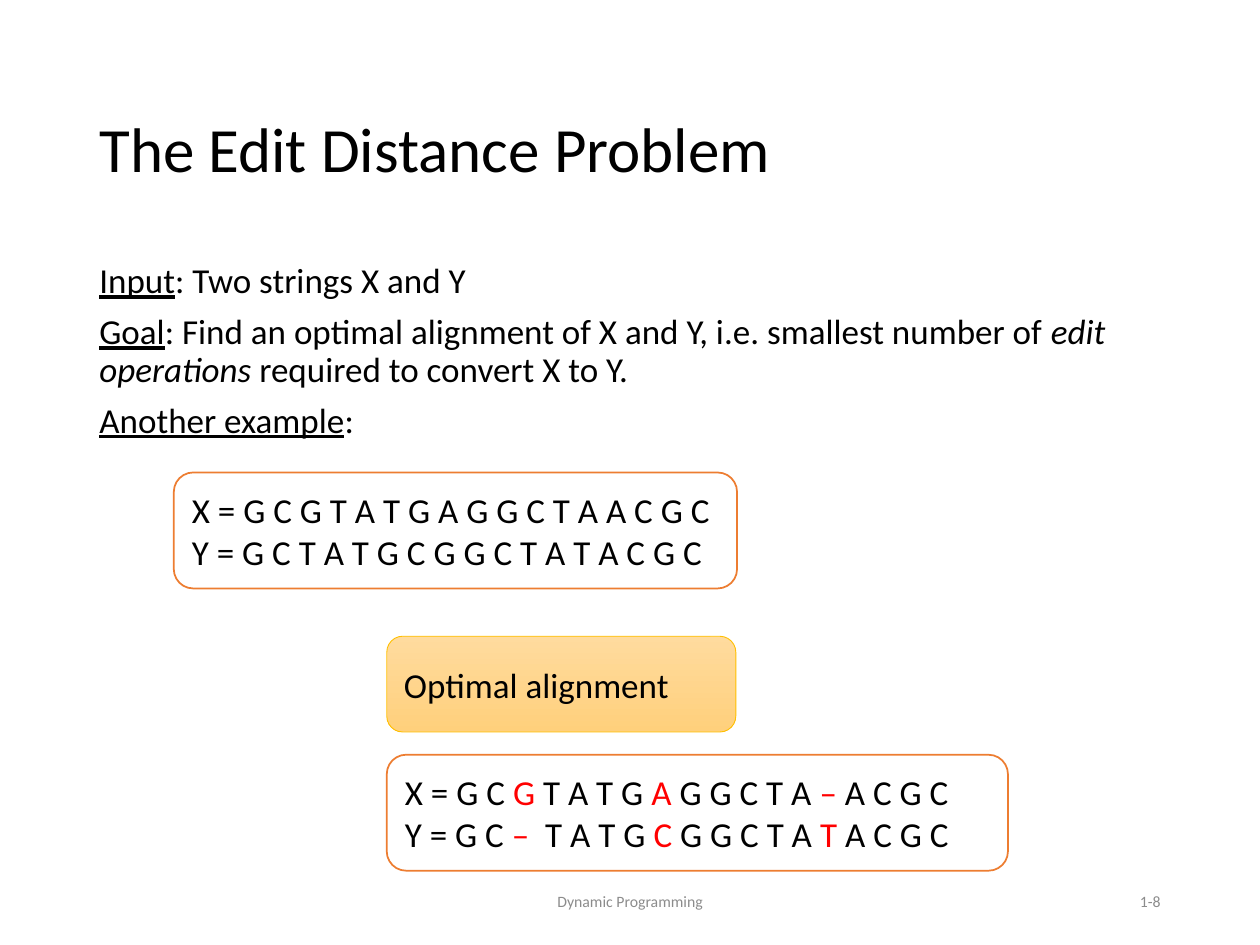
from pptx import Presentation
from pptx.dml.color import RGBColor
from pptx.enum.shapes import MSO_SHAPE
from pptx.enum.text import MSO_ANCHOR, PP_ALIGN
from pptx.util import Inches, Pt

COLORS = {
    "text": "000000",
    "footer": "8C8C8C",
    "edit": "FF0000",
    "panel": "FFFFFF",
    "panel_line": "ED7D31",
    "label_top": "FFDB9E",
    "label_bottom": "FFD07C",
    "label_line": "FFC000",
}
FONT = "Calibri"
UNDERLINE = {"underline": True}
ITALIC = {"italic": True}
EDIT = {"color": "edit"}


def rgb(name):
    return RGBColor.from_string(COLORS[name])


def write(shape, paragraphs, size=20, color="text", align=PP_ALIGN.LEFT,
          anchor=MSO_ANCHOR.MIDDLE, line_spacing=None, space_before=None):
    """Fill a shape with paragraphs, each a list of (text, format) spans."""
    frame = shape.text_frame
    frame.word_wrap = True
    frame.vertical_anchor = anchor
    for index, spans in enumerate(paragraphs):
        para = frame.add_paragraph() if index else frame.paragraphs[0]
        para.alignment = align
        if line_spacing is not None:
            para.line_spacing = line_spacing
        if space_before is not None:
            para.space_before = Pt(space_before)
        for text, style in spans:
            span = para.add_run()
            span.text = text
            font = span.font
            font.name, font.size = FONT, Pt(size)
            font.color.rgb = rgb(style.get("color", color))
            font.underline = style.get("underline")
            font.italic = style.get("italic")


def add_text(page, box, paragraphs, **style):
    shape = page.shapes.add_textbox(*map(Inches, box))
    write(shape, paragraphs, **style)


def add_rounded(page, box, line, width):
    shape = page.shapes.add_shape(MSO_SHAPE.ROUNDED_RECTANGLE, *map(Inches, box))
    shape.shadow.inherit = False
    shape.line.color.rgb = rgb(line)
    shape.line.width = Pt(width)
    return shape


def add_panel(page, box, strings):
    """White panel holding a pair of strings."""
    panel = add_rounded(page, box, "panel_line", 1)
    panel.fill.solid()
    panel.fill.fore_color.rgb = rgb("panel")
    write(panel, strings)


def add_label(page, box, text):
    """Label with a gradient running from top to bottom."""
    label = add_rounded(page, box, "label_line", 0.5)
    label.fill.gradient()
    label.fill.gradient_angle = 270
    for stop, name in zip(label.fill.gradient_stops, ("label_top", "label_bottom")):
        stop.color.rgb = rgb(name)
    write(label, [[(text, {})]])


def add_footer(page, left, top, width):
    """Centred course name and right-aligned page number."""
    style = {"size": 9, "color": "footer"}
    middle, number, height = 3.38, 2.25, 0.4
    add_text(page, (left + (width - middle) / 2, top, middle, height),
             [[("Dynamic Programming", {})]], align=PP_ALIGN.CENTER, **style)
    add_text(page, (left + width - number, top, number, height),
             [[("1-8", {})]], align=PP_ALIGN.RIGHT, **style)


def add_problem(page, left, top, width, height):
    """Statement of the problem."""
    add_text(page, (left, top, width, height), [
        [("Input", UNDERLINE), (": Two strings X and Y", {})],
        [("Goal", UNDERLINE),
         (": Find an optimal alignment of X and Y, i.e. smallest number of ", {}),
         ("edit operations", ITALIC),
         (" required to convert X to Y.", {})],
        [("Another example", UNDERLINE), (":", {})],
    ], anchor=MSO_ANCHOR.TOP, line_spacing=0.9, space_before=7.5)


def aligned(name, first, second, third):
    """One aligned string with its three edited positions in red."""
    return [(f"{name} = G C ", {}), (first, EDIT), (" T A T G ", {}),
            (second, EDIT), (" G G C T A ", {}), (third, EDIT), (" A C G C", {})]


def add_example(page, left, top):
    """Two strings, then their optimal alignment set further right."""
    indent, panel_height = 1.69, 0.92
    add_label(page, (left + indent, top + 1.3, 2.77, 0.76), "Optimal alignment")
    add_panel(page, (left, top, 4.47, panel_height), [
        [("X = G C G T A T G A G G C T A A C G C", {})],
        [("Y = G C T A T G C G G C T A T A C G C", {})],
    ])
    add_panel(page, (left + indent, top + 2.24, 4.93, panel_height),
              [aligned("X", "G", "A", "–"), aligned("Y", "– ", "C", "T")])


def main():
    deck = Presentation()
    deck.slide_width, deck.slide_height = Inches(10), Inches(7.5)
    page = deck.slides.add_slide(deck.slide_layouts[6])
    left, width = 0.69, 8.62
    add_text(page, (left, 0.4, width, 1.45), [[("The Edit Distance Problem", {})]],
             size=36, line_spacing=1.15, space_before=6)
    add_footer(page, left, 6.95, width)
    add_problem(page, left, 2.04, width, 4.76)
    add_example(page, 1.38, 3.75)
    deck.save("out.pptx")


if __name__ == "__main__":
    main()
